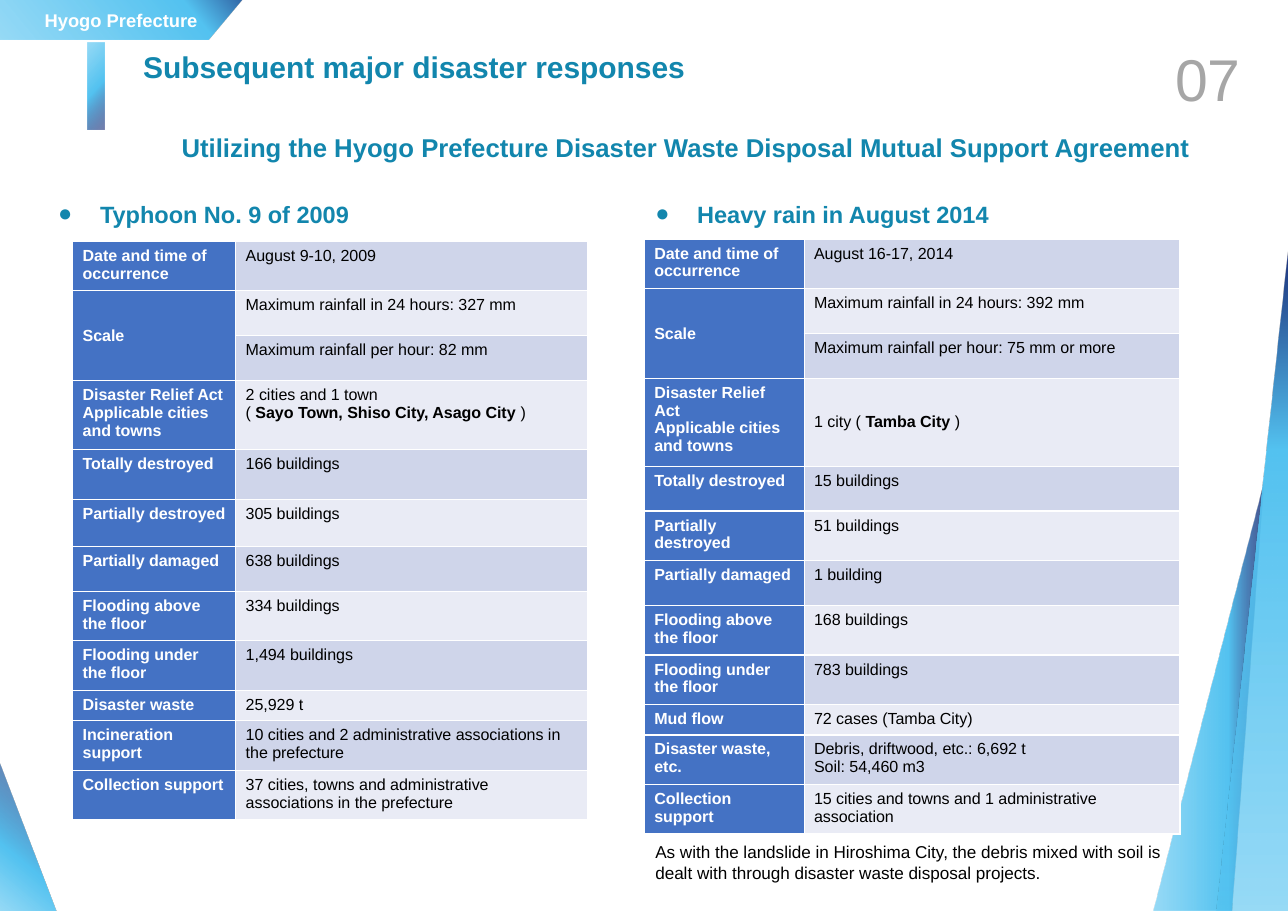
"""Builds the slide on major disaster responses in Hyogo Prefecture."""
from dataclasses import dataclass

from lxml import etree
from pptx import Presentation
from pptx.dml.color import RGBColor
from pptx.enum.shapes import MSO_SHAPE
from pptx.enum.text import MSO_ANCHOR, PP_ALIGN
from pptx.oxml.ns import qn
from pptx.util import Emu, Inches, Pt

TOP, MIDDLE = MSO_ANCHOR.TOP, MSO_ANCHOR.MIDDLE
LEFT, CENTER, RIGHT = PP_ALIGN.LEFT, PP_ALIGN.CENTER, PP_ALIGN.RIGHT
RECTANGLE, RIGHT_TRIANGLE = MSO_SHAPE.RECTANGLE, MSO_SHAPE.RIGHT_TRIANGLE
WIDTH, HEIGHT = Inches(11.69), Inches(8.27)
FONT = "Arial"
TEAL, WHITE, BLACK, GREY = "1286AD", "FFFFFF", "000000", "A6A6A6"
SKY, STEEL, NAVY = "54C3F1", "336AA9", "1C2B76"
LABEL_FILL, BANDS = "4472C4", ("CFD5EA", "E9EBF5")
ONE_LINE, TWO_LINES, SHORT = 4.92, 5.13, 3.17


@dataclass
class Area:
    """A box in percent of the slide's width and height."""
    left: float
    top: float
    width: float
    height: float

    def lengths(self) -> tuple[Emu, Emu, Emu, Emu]:
        """Returns the box as slide lengths."""
        return across(self.left), down(self.top), across(self.width), down(self.height)


@dataclass
class Stop:
    """A gradient stop with its place and opacity in percent."""
    place: int
    color: str
    opacity: int = 100


@dataclass
class Fact:
    """A table row: label, value with bold parts between asterisks, height."""
    label: str
    value: str
    height: float = TWO_LINES
    anchor: MSO_ANCHOR = TOP


@dataclass
class Disaster:
    """A bulleted heading with the table below it."""
    heading: str
    heading_area: Area
    left: float
    top: float
    columns: tuple[float, float]
    facts: list[Fact]


DISASTERS = [
    Disaster("Typhoon No. 9 of 2009", Area(3.68, 21.4, 45, 4.11), 5.65, 26.48, (12.66, 27.29), [
        Fact("Date and time of occurrence", "August 9-10, 2009"),
        Fact("Scale", "Maximum rainfall in 24 hours: 327 mm", ONE_LINE),
        Fact("", "Maximum rainfall per hour: 82 mm", ONE_LINE),
        Fact("Disaster Relief Act\nApplicable cities and towns",
             "2 cities and 1 town\n( *Sayo Town, Shiso City, Asago City* )", 7.1),
        Fact("Totally destroyed", "166 buildings", 5.55),
        Fact("Partially destroyed", "305 buildings"),
        Fact("Partially damaged", "638 buildings", ONE_LINE),
        Fact("Flooding above the floor", "334 buildings"),
        Fact("Flooding under the floor", "1,494 buildings"),
        Fact("Disaster waste", "25,929 t", SHORT),
        Fact("Incineration support", "10 cities and 2 administrative associations in the prefecture"),
        Fact("Collection support", "37 cities, towns and administrative associations in the prefecture"),
    ]),
    Disaster("Heavy rain in August 2014", Area(50.04, 21.4, 45, 4.11), 50.04, 26.24, (12.4, 29.17), [
        Fact("Date and time of occurrence", "August 16-17, 2014"),
        Fact("Scale", "Maximum rainfall in 24 hours: 392 mm", ONE_LINE),
        Fact("", "Maximum rainfall per hour: 75 mm or more", ONE_LINE),
        Fact("Disaster Relief Act\nApplicable cities and towns", "1 city ( *Tamba City* )", 8.95, MIDDLE),
        Fact("Totally destroyed", "15 buildings", ONE_LINE),
        Fact("Partially destroyed", "51 buildings"),
        Fact("Partially damaged", "1 building", ONE_LINE),
        Fact("Flooding above the floor", "168 buildings"),
        Fact("Flooding under the floor", "783 buildings"),
        Fact("Mud flow", "72 cases (Tamba City)", SHORT),
        Fact("Disaster waste, etc.", "Debris, driftwood, etc.: 6,692 t\nSoil: 54,460 m3"),
        Fact("Collection support", "15 cities and towns and 1 administrative association"),
    ]),
]


def across(share: float) -> Emu:
    return Emu(round(WIDTH * share / 100))


def down(share: float) -> Emu:
    return Emu(round(HEIGHT * share / 100))


def rgb(color: str) -> RGBColor:
    return RGBColor.from_string(color)


def child(parent, tag: str, **attributes):
    return etree.SubElement(parent, qn(tag), attributes)


def write(frame, text: str, *, size: float, color: str, bold: bool = False,
          align: PP_ALIGN = LEFT, bullet: bool = False) -> None:
    frame.word_wrap = True
    for number, line in enumerate(text.split("\n")):
        para = frame.add_paragraph() if number else frame.paragraphs[0]
        para.alignment = align
        if bullet:
            properties = para._p.get_or_add_pPr()
            properties.set("marL", str(Inches(0.38)))
            properties.set("indent", str(-Inches(0.38)))
            child(properties, "a:buFont", typeface=FONT)
            child(properties, "a:buChar", char="●")
        for index, part in enumerate(line.split("*")):
            span = para.add_run()
            span.text = part
            span.font.name, span.font.size = FONT, Pt(size)
            span.font.bold = bold or index % 2 == 1
            span.font.color.rgb = rgb(color)


def add_text(page, area: Area, text: str, anchor: MSO_ANCHOR = MIDDLE, **style) -> None:
    frame = page.shapes.add_textbox(*area.lengths()).text_frame
    frame.vertical_anchor = anchor
    frame.margin_left = frame.margin_right = Inches(0.05 if anchor == TOP and style["size"] > 12 else 0.1)
    write(frame, text, **style)


def paint(shape, angle: int, stops: list[Stop]) -> None:
    shape.shadow.inherit = False
    shape.line.fill.background()
    shape.fill.gradient()
    gradient = shape._element.spPr.find(qn("a:gradFill"))
    for part in list(gradient):
        gradient.remove(part)
    stop_list = child(gradient, "a:gsLst")
    for stop in stops:
        mark = child(stop_list, "a:gs", pos=str(stop.place * 1000))
        tint = child(mark, "a:srgbClr", val=stop.color)
        child(tint, "a:alpha", val=str(stop.opacity * 1000))
    child(gradient, "a:lin", ang=str(angle * 60000), scaled="0")


def add_outline(page, points: list[tuple[float, float]]):
    corners = [(across(x), down(y)) for x, y in points]
    builder = page.shapes.build_freeform(*corners[0])
    builder.add_line_segments(corners[1:], close=True)
    return builder.convert_to_shape()


def add_decoration(page) -> None:
    banner = add_outline(page, [(0, 0), (18.82, 0), (16.17, 4.35), (0, 4.35)])
    paint(banner, 320, [Stop(0, SKY, 60), Stop(78, SKY), Stop(99, STEEL), Stop(100, NAVY, 62)])
    banner.text_frame.vertical_anchor = MIDDLE
    write(banner.text_frame, "Hyogo Prefecture", size=12, color=WHITE, bold=True, align=CENTER)
    corner = page.shapes.add_shape(RIGHT_TRIANGLE, *Area(0, 83.8, 4.36, 16.2).lengths())
    paint(corner, 310, [Stop(0, SKY, 60), Stop(35, SKY), Stop(100, NAVY, 60)])
    ray = add_outline(page, [(95.64, 100), (98.12, 52.84), (89.56, 100)])
    paint(ray, 0, [Stop(0, SKY, 60), Stop(68, SKY), Stop(100, NAVY, 80)])
    edge = page.shapes.add_shape(RIGHT_TRIANGLE, *Area(94.44, 26.6, 5.56, 73.4).lengths())
    edge._element.spPr.find(qn("a:xfrm")).set("flipH", "1")
    paint(edge, 270, [Stop(0, SKY, 60), Stop(69, SKY), Stop(100, NAVY)])
    bar = page.shapes.add_shape(RECTANGLE, *Area(6.84, 4.72, 1.3, 9.55).lengths())
    paint(bar, 40, [Stop(0, SKY, 60), Stop(53, SKY), Stop(100, NAVY, 60)])


def fill_cell(cell, text: str, fill: str, anchor: MSO_ANCHOR, **style) -> None:
    cell.fill.solid()
    cell.fill.fore_color.rgb = rgb(fill)
    cell.vertical_anchor = anchor
    cell.margin_left = cell.margin_right = Inches(0.09)
    cell.margin_top = cell.margin_bottom = Inches(0.05)
    properties = cell._tc.get_or_add_tcPr()
    for index, side in enumerate(("a:lnL", "a:lnR", "a:lnT", "a:lnB")):
        border = child(properties, side, w=str(Pt(1)))
        child(child(border, "a:solidFill"), "a:srgbClr", val=WHITE)
        properties.insert(index, border)
    if text:
        write(cell.text_frame, text, size=10.5, **style)


def add_disaster(page, disaster: Disaster) -> None:
    add_text(page, disaster.heading_area, disaster.heading, size=15.4, color=TEAL, bold=True, bullet=True)
    facts = disaster.facts
    area = Area(disaster.left, disaster.top, sum(disaster.columns), sum(fact.height for fact in facts))
    table = page.shapes.add_table(len(facts), 2, *area.lengths()).table
    table.first_row = table.horz_banding = False
    for column, share in zip(table.columns, disaster.columns):
        column.width = across(share)
    for number, fact in enumerate(facts):
        table.rows[number].height = down(fact.height)
        label, value = table.cell(number, 0), table.cell(number, 1)
        fill_cell(label, fact.label, LABEL_FILL, MIDDLE if fact.label == "Scale" else TOP, color=WHITE, bold=True)
        fill_cell(value, fact.value, BANDS[number % 2], fact.anchor, color=BLACK)
    table.cell(1, 0).merge(table.cell(2, 0))


def main() -> None:
    deck = Presentation()
    deck.slide_width, deck.slide_height = WIDTH, HEIGHT
    page = deck.slides.add_slide(deck.slide_layouts[6])
    add_decoration(page)
    add_text(page, Area(86.48, 5.93, 10.69, 5.32), "07", size=38.5, color=GREY, align=RIGHT)
    add_text(page, Area(10.69, 4.72, 56.72, 12.09), "Subsequent major disaster responses",
             TOP, size=19.6, color=TEAL, bold=True)
    add_text(page, Area(13.26, 14.15, 81.86, 4.11),
             "Utilizing the Hyogo Prefecture Disaster Waste Disposal Mutual Support Agreement",
             size=16.8, color=TEAL, bold=True)
    for disaster in DISASTERS:
        add_disaster(page, disaster)
    add_text(page, Area(50.04, 91.78, 43.97, 7.74),
             "As with the landslide in Hiroshima City, the debris mixed with soil is dealt with "
             "through disaster waste disposal projects.", TOP, size=11.2, color=BLACK)
    deck.save("out.pptx")


if __name__ == "__main__":
    main()
